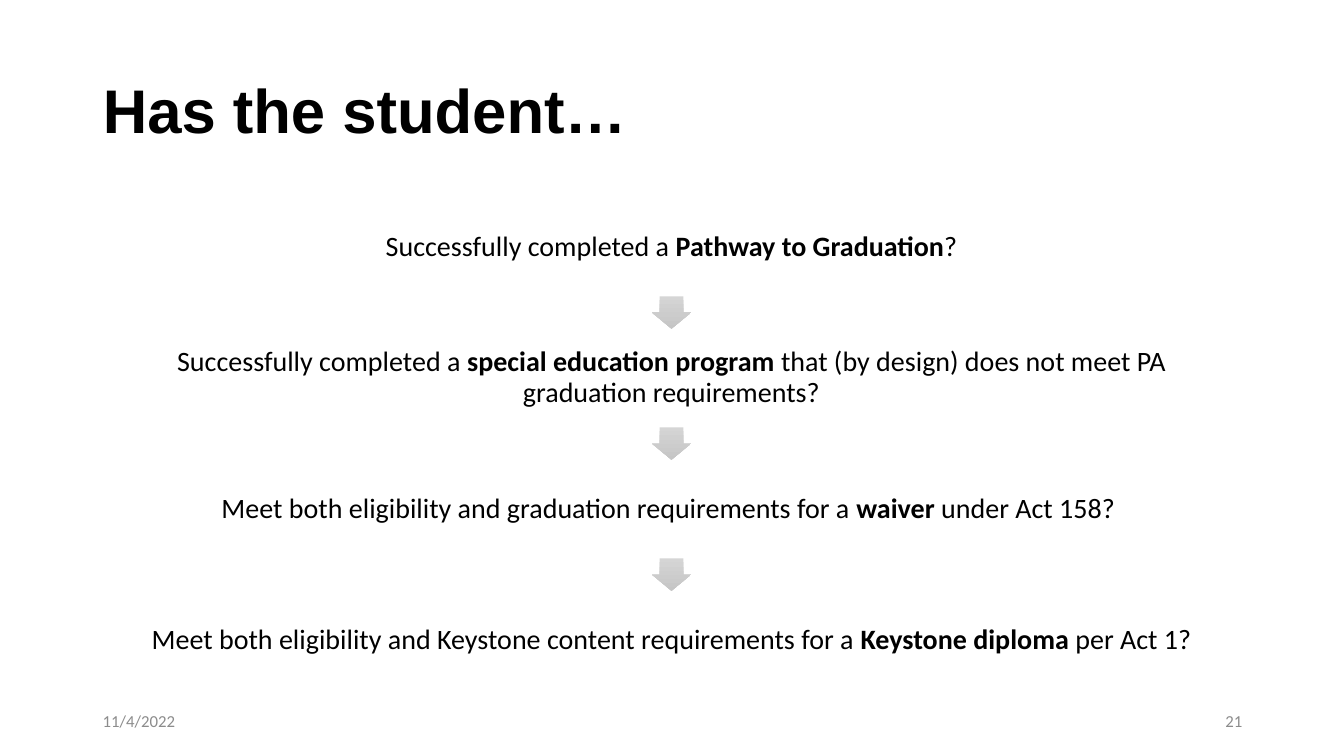
from pptx import Presentation
from pptx.dml.color import RGBColor
from pptx.enum import shapes, text
from pptx.util import Inches, Pt

COLORS = {"ink": "000000", "card": "FFFFFF", "footer": "8C8C8C",
          "arrow_top": "D5D5D5", "arrow_bottom": "C5C5C5"}

QUESTIONS = [
    ("Successfully completed a ", "Pathway to Graduation", "?"),
    ("Successfully completed a ", "special education program ",
     "that (by design) does not meet PA graduation requirements?"),
    ("Meet both eligibility and graduation requirements for a ", "waiver ",
     "under Act 158? "),
    ("Meet both eligibility and Keystone content requirements for a ",
     "Keystone diploma ", "per Act 1?"),
]
CENTER = 6.66
CARD_WIDTH, CARD_HEIGHT = 11.26, 0.86
ARROW_WIDTH, ARROW_HEIGHT = 0.39, 0.32
FIRST_TOP, STEP = 2.02, 1.3


def rgb(name):
    return RGBColor.from_string(COLORS[name])


def style(run, size, color, font="Calibri", bold=False):
    run.font.name = font
    run.font.size = Pt(size)
    run.font.bold = bold
    run.font.color.rgb = rgb(color)


deck = Presentation()
deck.slide_width, deck.slide_height = Inches(13.33), Inches(7.5)
slide = deck.slides.add_slide(deck.slide_layouts[5])

title = slide.shapes.title
title.left, title.top = Inches(0.92), Inches(0.4)
title.width, title.height = Inches(11.5), Inches(1.45)
title.text_frame.text = "Has the student…"
title.text_frame.vertical_anchor = text.MSO_ANCHOR.MIDDLE
heading = title.text_frame.paragraphs[0]
heading.alignment = text.PP_ALIGN.LEFT
heading.line_spacing = 0.9
style(heading.runs[0], 44, "ink", "Arial", True)

for index, parts in enumerate(QUESTIONS):
    top = FIRST_TOP + index * STEP
    card = slide.shapes.add_shape(
        shapes.MSO_SHAPE.ROUNDED_RECTANGLE, Inches(CENTER - CARD_WIDTH / 2),
        Inches(top), Inches(CARD_WIDTH), Inches(CARD_HEIGHT))
    card.adjustments[0] = 0.1
    card.shadow.inherit = False
    card.fill.solid()
    card.fill.fore_color.rgb = rgb("card")
    card.line.fill.background()

    frame = card.text_frame
    frame.word_wrap = True
    frame.vertical_anchor = text.MSO_ANCHOR.MIDDLE
    frame.margin_left = frame.margin_right = Inches(0.08)
    frame.margin_top = frame.margin_bottom = Inches(0.08)
    question = frame.paragraphs[0]
    question.alignment = text.PP_ALIGN.CENTER
    question.line_spacing = 0.9
    for position, words in enumerate(parts):
        run = question.add_run()
        run.text = words
        style(run, 20, "ink", bold=position == 1)

    if index < len(QUESTIONS) - 1:
        gap_middle = top + (CARD_HEIGHT + STEP) / 2
        arrow = slide.shapes.add_shape(
            shapes.MSO_SHAPE.DOWN_ARROW, Inches(CENTER - ARROW_WIDTH / 2),
            Inches(gap_middle - ARROW_HEIGHT / 2),
            Inches(ARROW_WIDTH), Inches(ARROW_HEIGHT))
        arrow.adjustments[0] = 0.6
        arrow.adjustments[1] = 0.5
        arrow.shadow.inherit = False
        arrow.line.fill.background()
        arrow.fill.gradient()
        arrow.fill.gradient_angle = 270
        for stop, shade in zip(arrow.fill.gradient_stops,
                               ("arrow_top", "arrow_bottom")):
            stop.color.rgb = rgb(shade)

for words, left, alignment in (("11/4/2022", 0.92, text.PP_ALIGN.LEFT),
                               ("21", 9.42, text.PP_ALIGN.RIGHT)):
    footer = slide.shapes.add_textbox(
        Inches(left), Inches(6.95), Inches(3), Inches(0.4)).text_frame
    footer.word_wrap = True
    footer.vertical_anchor = text.MSO_ANCHOR.MIDDLE
    footer.text = words
    footer.paragraphs[0].alignment = alignment
    style(footer.paragraphs[0].runs[0], 12, "footer")

deck.save("out.pptx")
